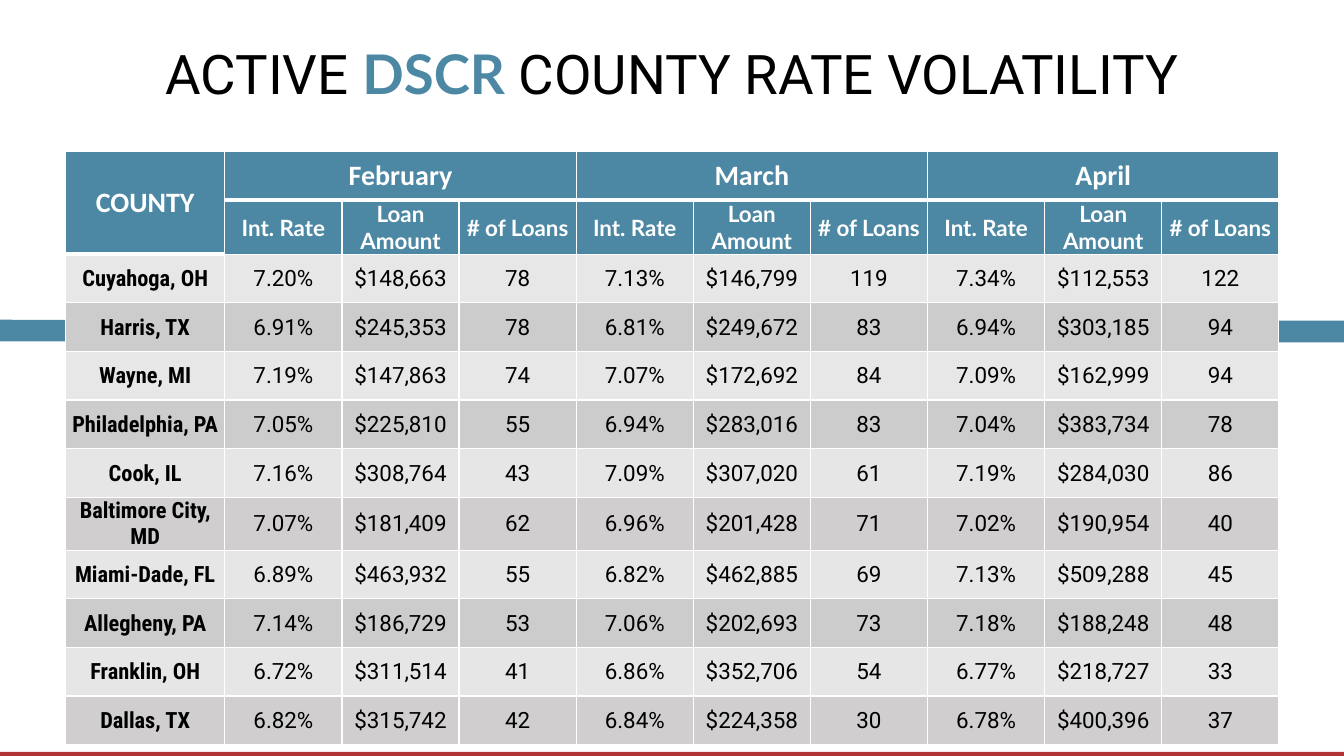
from dataclasses import dataclass

from pptx import Presentation
from pptx.dml.color import RGBColor
from pptx.enum.shapes import MSO_SHAPE
from pptx.enum.text import MSO_ANCHOR, MSO_AUTO_SIZE, PP_ALIGN
from pptx.oxml.ns import qn
from pptx.util import Inches, Pt
from lxml.etree import SubElement

TEAL, RED, WHITE, BLACK = "4C88A4", "B03335", "FFFFFF", "000000"
LIGHT, DARK, WARM_LIGHT, WARM_DARK = "E7E7E7", "CCCCCC", "E7E6E6", "D0CECE"
WIDTH, HEIGHT = Inches(13.333), Inches(7.5)

MONTHS = ["February", "March", "April"]
MEASURES = ["Int. Rate", "Loan Amount", "# of Loans"]

MONTH_FONT = {"name": "Calibri", "size": Pt(20), "bold": True}
MEASURE_FONT = {"name": "Lato", "size": Pt(16), "bold": True}
COUNTY_FONT = {"name": "Roboto Condensed", "size": Pt(16), "bold": True}
VALUE_FONT = {"name": "Roboto", "size": Pt(16), "bold": False}
TITLE_FONT = {"name": "Roboto", "size": Pt(39), "bold": False}
TITLE_ACCENT = {"name": "Lato", "size": Pt(39), "bold": True}
TIGHT = {"margin_left": Inches(0.01), "margin_right": Inches(0.01),
         "margin_top": Inches(0.01), "margin_bottom": 0}


@dataclass
class County:
    name: str
    fill: str
    values: str


COUNTIES = [
    County("Cuyahoga, OH", LIGHT, "7.20% $148,663 78 7.13% $146,799 119 7.34% $112,553 122"),
    County("Harris, TX", DARK, "6.91% $245,353 78 6.81% $249,672 83 6.94% $303,185 94"),
    County("Wayne, MI", LIGHT, "7.19% $147,863 74 7.07% $172,692 84 7.09% $162,999 94"),
    County("Philadelphia, PA", DARK, "7.05% $225,810 55 6.94% $283,016 83 7.04% $383,734 78"),
    County("Cook, IL", WARM_LIGHT, "7.16% $308,764 43 7.09% $307,020 61 7.19% $284,030 86"),
    County("Baltimore City, MD", WARM_DARK, "7.07% $181,409 62 6.96% $201,428 71 7.02% $190,954 40"),
    County("Miami-Dade, FL", WARM_LIGHT, "6.89% $463,932 55 6.82% $462,885 69 7.13% $509,288 45"),
    County("Allegheny, PA", DARK, "7.14% $186,729 53 7.06% $202,693 73 7.18% $188,248 48"),
    County("Franklin, OH", WARM_LIGHT, "6.72% $311,514 41 6.86% $352,706 54 6.77% $218,727 33"),
    County("Dallas, TX", WARM_DARK, "6.82% $315,742 42 6.84% $224,358 30 6.78% $400,396 37"),
]


def x(percent: float) -> int:
    return round(WIDTH * percent / 100)


def y(percent: float) -> int:
    return round(HEIGHT * percent / 100)


def rgb(color: str) -> RGBColor:
    return RGBColor.from_string(color)


def apply(target, values: dict) -> None:
    for name, value in values.items():
        setattr(target, name, value)


def add_run(p, text: str, font: dict, color: str) -> None:
    r = p.add_run()
    r.text = text
    apply(r.font, font)
    r.font.color.rgb = rgb(color)


def paint(sp, color: str) -> None:
    sp.shadow.inherit = False
    sp.fill.solid()
    sp.fill.fore_color.rgb = rgb(color)
    sp.line.fill.background()


def add_bars(slide) -> None:
    """Draw the slightly tilted band behind the table and the bottom rule."""
    builder = slide.shapes.build_freeform(0, y(42.3))
    builder.add_line_segments([(WIDTH, y(42.43)), (WIDTH, y(45.3)), (0, y(45.17))])
    paint(builder.convert_to_shape(), TEAL)
    paint(slide.shapes.add_shape(MSO_SHAPE.RECTANGLE, 0, y(99.47), WIDTH, y(0.53)), RED)


def format_title(title) -> None:
    apply(title, {"left": x(1.95), "top": y(1.87), "width": x(96.1), "height": y(16.67)})
    tf = title.text_frame
    apply(tf, {"word_wrap": True, "auto_size": MSO_AUTO_SIZE.NONE,
               "vertical_anchor": MSO_ANCHOR.MIDDLE})
    p = tf.paragraphs[0]
    apply(p, {"alignment": PP_ALIGN.CENTER, "line_spacing": 0.9})
    add_run(p, "ACTIVE ", TITLE_FONT, BLACK)
    add_run(p, "DSCR", TITLE_ACCENT, TEAL)
    add_run(p, " COUNTY RATE VOLATILITY", TITLE_FONT, BLACK)


def set_borders(cell, top: int, bottom: int) -> None:
    """Give a cell white borders; top and bottom are widths in points."""
    props = cell._tc.get_or_add_tcPr()
    for side, width in {"lnL": 1, "lnR": 1, "lnT": top, "lnB": bottom}.items():
        ln = SubElement(props, qn(f"a:{side}"), w=str(Pt(width)))
        SubElement(SubElement(ln, qn("a:solidFill")), qn("a:srgbClr"), val=WHITE)


def format_cell(cell, fill: str, top: int = 1, bottom: int = 1) -> None:
    set_borders(cell, top, bottom)
    cell.fill.solid()
    cell.fill.fore_color.rgb = rgb(fill)
    cell.vertical_anchor = MSO_ANCHOR.MIDDLE


def write_cell(cell, text: str, font: dict, color: str) -> None:
    p = cell.text_frame.paragraphs[0]
    p.alignment = PP_ALIGN.CENTER
    add_run(p, text, font, color)


def add_rate_table(slide) -> None:
    n_rows, n_cols = len(COUNTIES) + 2, len(MONTHS) * len(MEASURES) + 1
    width, county_width, row_height = x(90.3), x(11.85), y(6.43)
    table = slide.shapes.add_table(n_rows, n_cols, x(4.88), y(20),
                                   width, row_height * n_rows).table
    for i, column in enumerate(table.columns):
        column.width = county_width if i == 0 else (width - county_width) // (n_cols - 1)
    for row in table.rows:
        row.height = row_height

    for col in range(n_cols):
        format_cell(table.cell(0, col), TEAL, bottom=3)
        format_cell(table.cell(1, col), TEAL, top=3, bottom=1 if col else 3)
    table.cell(0, 0).merge(table.cell(1, 0))
    write_cell(table.cell(0, 0), "COUNTY", MONTH_FONT, WHITE)
    for i, month in enumerate(MONTHS):
        first = 1 + i * len(MEASURES)
        table.cell(0, first).merge(table.cell(0, first + len(MEASURES) - 1))
        write_cell(table.cell(0, first), month, MONTH_FONT, WHITE)
        for j, measure in enumerate(MEASURES):
            cell = table.cell(1, first + j)
            apply(cell, TIGHT)
            write_cell(cell, measure, MEASURE_FONT, WHITE)

    for row, county in enumerate(COUNTIES, start=2):
        for col, text in enumerate([county.name, *county.values.split()]):
            cell = table.cell(row, col)
            apply(cell, TIGHT)
            format_cell(cell, county.fill, top=3 if (row, col) == (2, 0) else 1)
            write_cell(cell, text, VALUE_FONT if col else COUNTY_FONT, BLACK)


def main() -> None:
    prs = Presentation()
    apply(prs, {"slide_width": WIDTH, "slide_height": HEIGHT})
    slide = prs.slides.add_slide(prs.slide_layouts[5])
    format_title(slide.shapes.title)
    add_bars(slide)
    add_rate_table(slide)
    prs.save("out.pptx")


if __name__ == "__main__":
    main()
